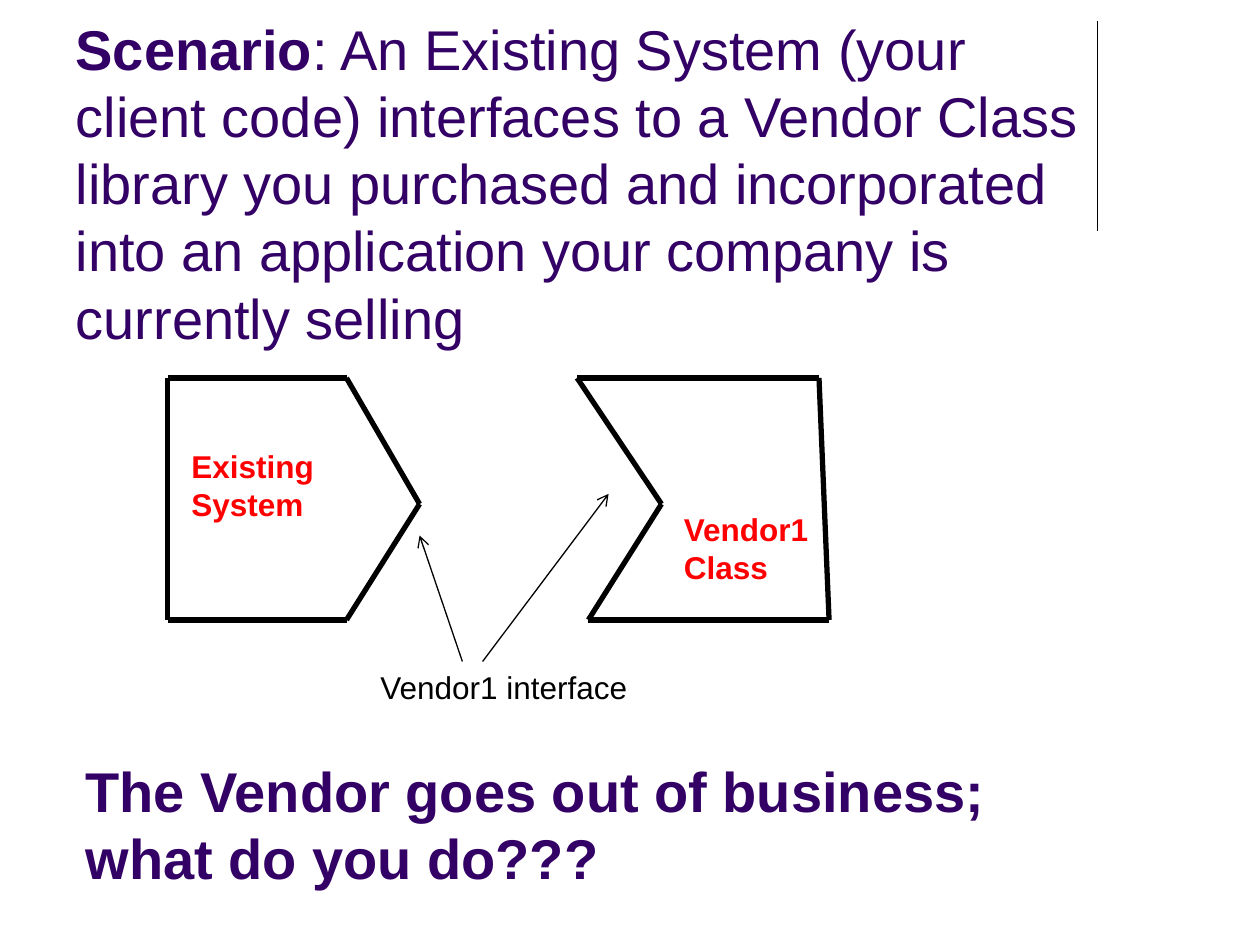
from lxml.etree import SubElement
from pptx import Presentation
from pptx.dml.color import RGBColor
from pptx.enum.shapes import MSO_CONNECTOR
from pptx.enum.text import MSO_ANCHOR, PP_ALIGN
from pptx.oxml.ns import qn
from pptx.util import Inches, Pt

COLORS = {"heading": "330066", "label": "FF0000", "ink": "000000"}
FONT = "Arial"


def add_line(slide, start, end, width=0.75, arrow=False):
    """Draw a straight black line between two points given in inches."""
    ends = [Inches(value) for value in (*start, *end)]
    line = slide.shapes.add_connector(MSO_CONNECTOR.STRAIGHT, *ends)
    line.line.color.rgb = RGBColor.from_string(COLORS["ink"])
    line.line.width = Pt(width)
    if arrow:
        SubElement(line.line._get_or_add_ln(), qn("a:tailEnd"), type="arrow")
    SubElement(line._element.spPr, qn("a:effectLst"))


def place(shape, box):
    """Move and size a shape to a box given in inches."""
    shape.left, shape.top, shape.width, shape.height = map(Inches, box)


def style_text(shape, size, color, bold=None, anchor=MSO_ANCHOR.TOP, wrap=True):
    """Format the single left-aligned paragraph of a shape."""
    frame = shape.text_frame
    frame.word_wrap = wrap
    frame.vertical_anchor = anchor
    paragraph = frame.paragraphs[0]
    paragraph.alignment = PP_ALIGN.LEFT
    font = paragraph.font
    font.name, font.size, font.bold = FONT, Pt(size), bold
    font.color.rgb = RGBColor.from_string(COLORS[color])


def add_text(slide, box, text, size, color, **style):
    """Add a text box holding one paragraph."""
    shape = slide.shapes.add_textbox(*map(Inches, box))
    shape.text_frame.text = text
    style_text(shape, size, color, **style)


def add_title(slide, box):
    """Fill the title placeholder and draw the rule to its right."""
    left, top, width, _ = box
    title = slide.shapes.title
    place(title, box)
    paragraph = title.text_frame.paragraphs[0]
    lead = paragraph.add_run()
    lead.text = "Scenario"
    lead.font.bold = True
    paragraph.add_run().text = (
        ": An Existing System (your client code) interfaces to a Vendor Class "
        "library you purchased and incorporated into an application your "
        "company is currently selling"
    )
    style_text(title, 32, "heading", anchor=MSO_ANCHOR.BOTTOM)
    rule_x = left + width - 0.04
    add_line(slide, (rule_x, top + 0.04), (rule_x, top + 1.7))


def add_block(slide, origin, corners, label, label_box):
    """Draw a closed outline of thick lines with a label inside it."""
    left, top = origin
    points = [(left + x, top + y) for x, y in corners]
    for start, end in zip(points, points[1:] + points[:1]):
        add_line(slide, start, end, width=3)
    x, y, width, height = label_box
    add_text(slide, (left + x, top + y, width, height), label, 18, "label", bold=True)


def add_interface(slide, box):
    """Add the interface caption and its arrows to both blocks."""
    left, top, _, _ = box
    add_text(slide, box, "Vendor1 interface", 18, "ink", wrap=False)
    for start_x, end_x, rise in ((0.75, 0.41, 1), (0.91, 1.91, 1.33)):
        add_line(slide, (left + start_x, top), (left + end_x, top - rise), arrow=True)


def main():
    """Build the scenario slide and save it."""
    presentation = Presentation()
    presentation.slide_width, presentation.slide_height = Inches(10), Inches(7.5)
    slide = presentation.slides.add_slide(presentation.slide_layouts[5])
    add_title(slide, (0.5, 0.13, 8.25, 2.7))
    add_block(
        slide, (1.33, 3),
        [(0, 0), (1.42, 0), (2, 1), (1.42, 1.92), (0, 1.92)],
        "Existing System", (0.09, 0.5, 1.75, 0.91),
    )
    add_block(
        slide, (4.58, 3),
        [(0, 0), (1.92, 0), (2, 1.92), (0.09, 1.92), (0.67, 1)],
        "Vendor1 Class", (0.75, 1, 1.33, 0.71),
    )
    add_text(
        slide, (0.58, 5.75, 8.25, 1.37),
        "The Vendor goes out of business; what do you do???",
        32, "heading", bold=True, anchor=MSO_ANCHOR.BOTTOM,
    )
    add_interface(slide, (2.92, 5.25, 2.18, 0.4))
    presentation.save("out.pptx")


if __name__ == "__main__":
    main()
